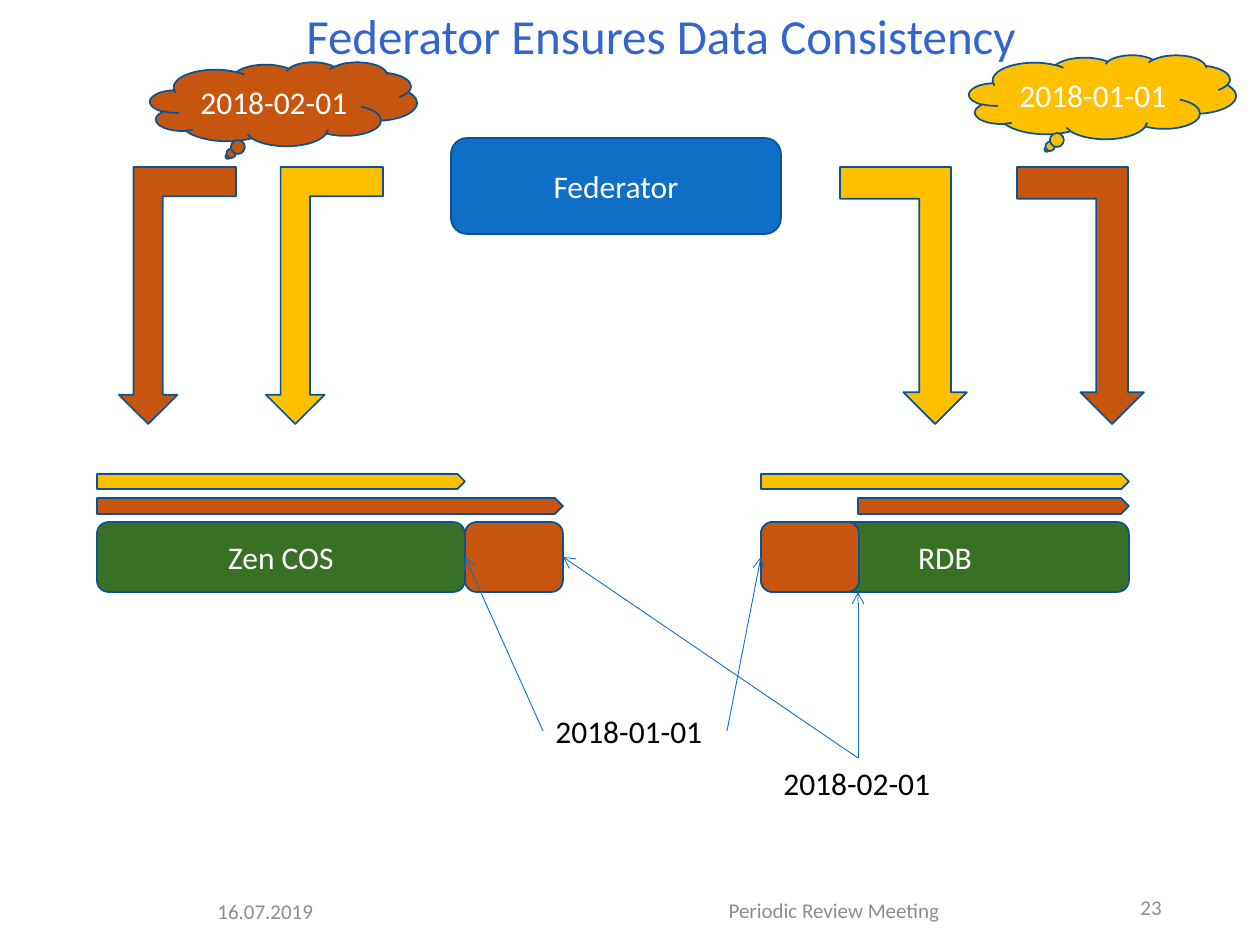
import pptx
import pptx.util
import pptx.dml.color
import pptx.enum.shapes
import pptx.enum.text
import lxml.etree

PX = 914400 / 126
KIND = pptx.enum.shapes.MSO_SHAPE
ALIGN = pptx.enum.text.PP_ALIGN
MID = pptx.enum.text.MSO_ANCHOR.MIDDLE
TOP = pptx.enum.text.MSO_ANCHOR.TOP
NS = "{http://schemas.openxmlformats.org/drawingml/2006/main}"
GOLD, RUST, GREEN, BLUE, EDGE = "FFC000", "C65510", "387026", "0F6FC6", "0B5292"


def emu(*sizes):
    return [round(size * PX) for size in sizes]


def tint(color, code):
    color.rgb = pptx.dml.color.RGBColor.from_string(code)


def write(shape, text, size, code, align, anchor=MID, wrap=True):
    frame = shape.text_frame
    frame.word_wrap = wrap
    frame.vertical_anchor = anchor
    para = frame.paragraphs[0]
    para.alignment = align
    run = para.add_run()
    run.text = text
    run.font.size = pptx.util.Pt(size)
    run.font.name = "Calibri"
    tint(run.font.color, code)
    return para


def draw(slide, kind, box, fill, text=""):
    shape = slide.shapes.add_shape(kind, *emu(*box))
    shape.shadow.inherit = False
    shape.fill.solid()
    tint(shape.fill.fore_color, fill)
    tint(shape.line.color, EDGE)
    shape.line.width = pptx.util.Pt(1)
    if text:
        write(shape, text, 18, "FFFFFF", ALIGN.CENTER)
    return shape


def label(slide, box, text, size, code, align=ALIGN.LEFT, **opts):
    shape = slide.shapes.add_textbox(*emu(*box))
    para = write(shape, text, size, code, align, **opts)
    return shape, para


def link(slide, start, side, end, spot):
    """Arrow from a side of start to a side number or an (x, y) point of end."""
    x, y = (0, 0) if end else spot
    line = slide.shapes.add_connector(
        pptx.enum.shapes.MSO_CONNECTOR.STRAIGHT, *emu(0, 0, x, y))
    line.begin_connect(start, side)
    if end:
        line.end_connect(end, spot)
    tint(line.line.color, BLUE)
    line.line.width = pptx.util.Pt(0.5)
    props = line._element.spPr
    lxml.etree.SubElement(props.find(NS + "ln"), NS + "tailEnd", type="arrow")
    lxml.etree.SubElement(props, NS + "effectLst")


def head(slide, box):
    para = label(slide, box, "Federator Ensures Data Consistency", 28, "3366CC")[1]
    para.line_spacing = 0.9


def foot(slide, x, y):
    for dx, dy, wide, text, align in (
            (0, 4, 284, "16.07.2019", ALIGN.LEFT),
            (416, 3, 426, "Periodic Review Meeting", ALIGN.CENTER),
            (890, 0, 79, "23", ALIGN.RIGHT)):
        label(slide, (x + dx, y + dy, wide, 50), text, 12, "8C8C8C", align)


def flow(slide, box, gap, fills, left):
    """Pair of bent arrows running down into a store."""
    x, y, wide, high = box
    for i, fill in enumerate(fills):
        shape = draw(slide, KIND.BENT_UP_ARROW, (x + i * gap, y, wide, high), fill)
        if left:
            shape.rotation = 180
        else:
            shape._element.spPr.find(NS + "xfrm").set("flipV", "1")


def store(slide, x, y, name, span, part):
    """Two range bars above a store; returns the overlapping part."""
    draw(slide, KIND.PENTAGON, (x, y, 368, 15), GOLD)
    draw(slide, KIND.PENTAGON, (x + span[0], y + 24, span[1], 16), RUST)
    draw(slide, KIND.ROUNDED_RECTANGLE, (x, y + 48, 368, 70), GREEN, name)
    return draw(slide, KIND.ROUNDED_RECTANGLE, (x + part, y + 48, 98, 70), RUST)


def dates(slide, x, y, old, new):
    """Date labels and their arrows to the ends of the store parts."""
    first = label(slide, (x, y, 184, 50), "2018-01-01", 18, "000000", anchor=TOP)[0]
    last = label(slide, (x + 228, y + 52, 174, 50), "2018-02-01", 18, "000000",
                 anchor=TOP, wrap=False)[0]
    link(slide, first, 1, old, 1)
    link(slide, first, 3, new, 1)
    link(slide, last, 0, old, 3)
    link(slide, last, 0, None, (858, 592))


def main():
    deck = pptx.Presentation()
    deck.slide_width, deck.slide_height = emu(1260, 945)
    slide = deck.slides.add_slide(deck.slide_layouts[6])

    # Title and footer
    head(slide, (294, 0, 881, 78))
    foot(slide, 205, 882)

    # Federator and the requested dates
    draw(slide, KIND.ROUNDED_RECTANGLE, (451, 138, 330, 96), BLUE, "Federator")
    draw(slide, KIND.CLOUD_CALLOUT, (150, 62, 267, 84), RUST, "2018-02-01")
    draw(slide, KIND.CLOUD_CALLOUT, (969, 55, 267, 84), GOLD, "2018-01-01")

    # Flows into the stores
    flow(slide, (119, 167, 117, 257), 147, (RUST, GOLD), True)
    flow(slide, (840, 167, 127, 257), 177, (GOLD, RUST), False)

    # Stores and their date ranges
    old = store(slide, 97, 474, "Zen COS", (0, 466), 368)
    new = store(slide, 761, 474, "RDB", (97, 271), 0)
    dates(slide, 543, 706, old, new)

    deck.save("out.pptx")


if __name__ == "__main__":
    main()
